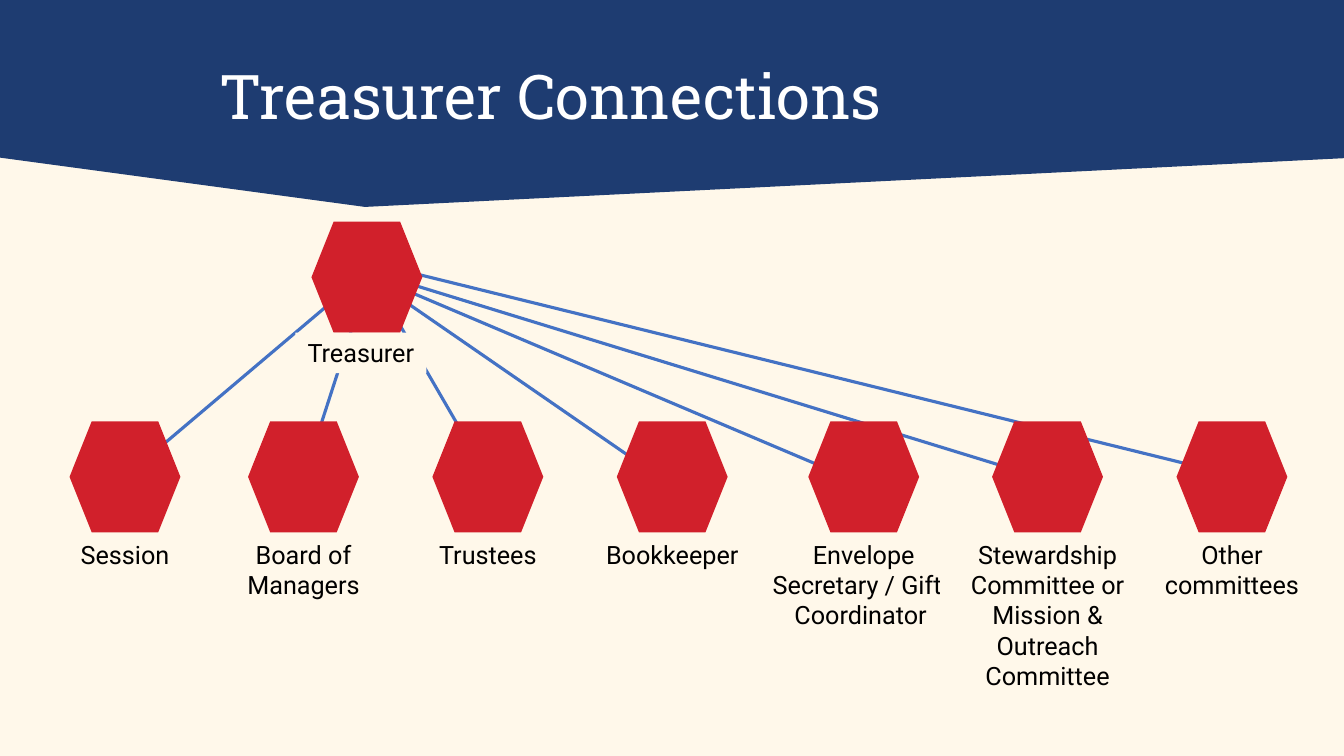
from dataclasses import dataclass

from lxml import etree
from pptx import Presentation
from pptx.dml.color import RGBColor
from pptx.enum.shapes import MSO_CONNECTOR, MSO_SHAPE
from pptx.enum.text import MSO_ANCHOR, MSO_AUTO_SIZE, PP_ALIGN
from pptx.oxml.ns import qn
from pptx.util import Pt

STRAIGHT = MSO_CONNECTOR.STRAIGHT
HEXAGON = MSO_SHAPE.FLOWCHART_PREPARATION
TOP, MIDDLE = MSO_ANCHOR.TOP, MSO_ANCHOR.MIDDLE
NO_FIT, GROW = MSO_AUTO_SIZE.NONE, MSO_AUTO_SIZE.SHAPE_TO_FIT_TEXT
LEFT, CENTER = PP_ALIGN.LEFT, PP_ALIGN.CENTER

CREAM = RGBColor(0xFF, 0xF8, 0xEA)
NAVY = RGBColor(0x1E, 0x3C, 0x71)
RED = RGBColor(0xD1, 0x20, 0x2B)
BLUE = RGBColor(0x44, 0x72, 0xC4)
BLACK = RGBColor(0, 0, 0)
WHITE = RGBColor(0xFF, 0xFF, 0xFF)

HEXAGON_SIZE = 79.2
HEXAGON_TOP = 301
LABEL_TOP = 381.6
BANNER = [(0, -1.4), (960, -1.4), (960, 113), (260.7, 147.8), (0, 112.6)]

Point = tuple[float, float]


@dataclass
class Role:
    label: str
    center: float
    width: float
    height: float
    link_start: Point
    link_end: Point


ROLES = [
    Role("Session", 89.3, 181.4, 29, (257.8, 198), (89.3, 340.6)),
    Role("Board of Managers", 216.8, 130.3, 51, (262.1, 201.6), (216, 344.2)),
    Role("Trustees", 348.5, 181.4, 29, (267.1, 200.2), (350.6, 344.2)),
    Role("Bookkeeper", 480.2, 181.4, 29, (271.4, 203), (478.1, 345.6)),
    Role("Envelope Secretary / Gifts Coordinator ", 617, 161.3, 72.7,
         (276.5, 201.6), (616.3, 345.6)),
    Role("Stewardship Committee or Mission & Outreach Committee", 748.3, 153.4,
         124.6, (284.4, 200.2), (748.1, 342.7)),
    Role("Other committees", 880, 144.7, 56.9, (289.4, 193.7), (882, 339.8)),
]


def add_link(page, start: Point, end: Point) -> None:
    link = page.shapes.add_connector(STRAIGHT, *map(Pt, start + end))
    link.line.color.rgb = BLUE
    link.line.width = Pt(2.25)
    etree.SubElement(link._element.spPr, qn("a:effectLst"))


def paint(shape, color: RGBColor) -> None:
    shape.shadow.inherit = False
    shape.fill.solid()
    shape.fill.fore_color.rgb = color
    shape.line.fill.background()


def add_banner(page) -> None:
    start, *corners = [(Pt(x), Pt(y)) for x, y in BANNER]
    builder = page.shapes.build_freeform(*start)
    builder.add_line_segments(corners, close=True)
    paint(builder.convert_to_shape(), NAVY)


def add_hexagon(page, center: float, top: float) -> None:
    frame = (center - HEXAGON_SIZE / 2, top, HEXAGON_SIZE, HEXAGON_SIZE)
    paint(page.shapes.add_shape(HEXAGON, *map(Pt, frame)), RED)


def add_text(page, text: str, left: float, top: float, width: float,
             height: float, frame_format: dict, para_format: dict,
             font_format: dict, color: RGBColor):
    box = page.shapes.add_textbox(*map(Pt, (left, top, width, height)))
    frame = box.text_frame
    para = frame.paragraphs[0]
    span = para.add_run()
    span.text = text
    span.font.color.rgb = color
    for target, values in ((frame, frame_format), (para, para_format),
                           (span.font, font_format)):
        for name, value in values.items():
            setattr(target, name, value)
    return box


def add_label(page, text: str, center: float, top: float, width: float,
              height: float) -> None:
    box = add_text(page, text, center - width / 2, top, width, height,
                   {"word_wrap": True, "auto_size": GROW, "vertical_anchor": TOP},
                   {"alignment": CENTER},
                   {"name": "Roboto", "size": Pt(18)}, BLACK)
    box.fill.solid()
    box.fill.fore_color.rgb = CREAM


def main() -> None:
    deck = Presentation()
    deck.slide_width, deck.slide_height = Pt(960), Pt(540)
    page = deck.slides.add_slide(deck.slide_layouts[6])
    page.background.fill.solid()
    page.background.fill.fore_color.rgb = CREAM

    for role in ROLES:
        add_link(page, role.link_start, role.link_end)
    add_banner(page)

    add_hexagon(page, 262.1, 158.4)
    add_label(page, "Treasurer", 257.8, 237.6, 93.6, 29)
    for role in ROLES:
        add_hexagon(page, role.center, HEXAGON_TOP)
        add_label(page, role.label, role.center, LABEL_TOP, role.width, role.height)

    add_text(page, "Treasurer Connections", 149.8, 18.7, 663, 104.4,
             {"word_wrap": True, "auto_size": NO_FIT, "vertical_anchor": MIDDLE},
             {"alignment": LEFT, "line_spacing": 0.9},
             {"name": "Roboto Slab", "size": Pt(44)}, WHITE)
    deck.save("out.pptx")


if __name__ == "__main__":
    main()
